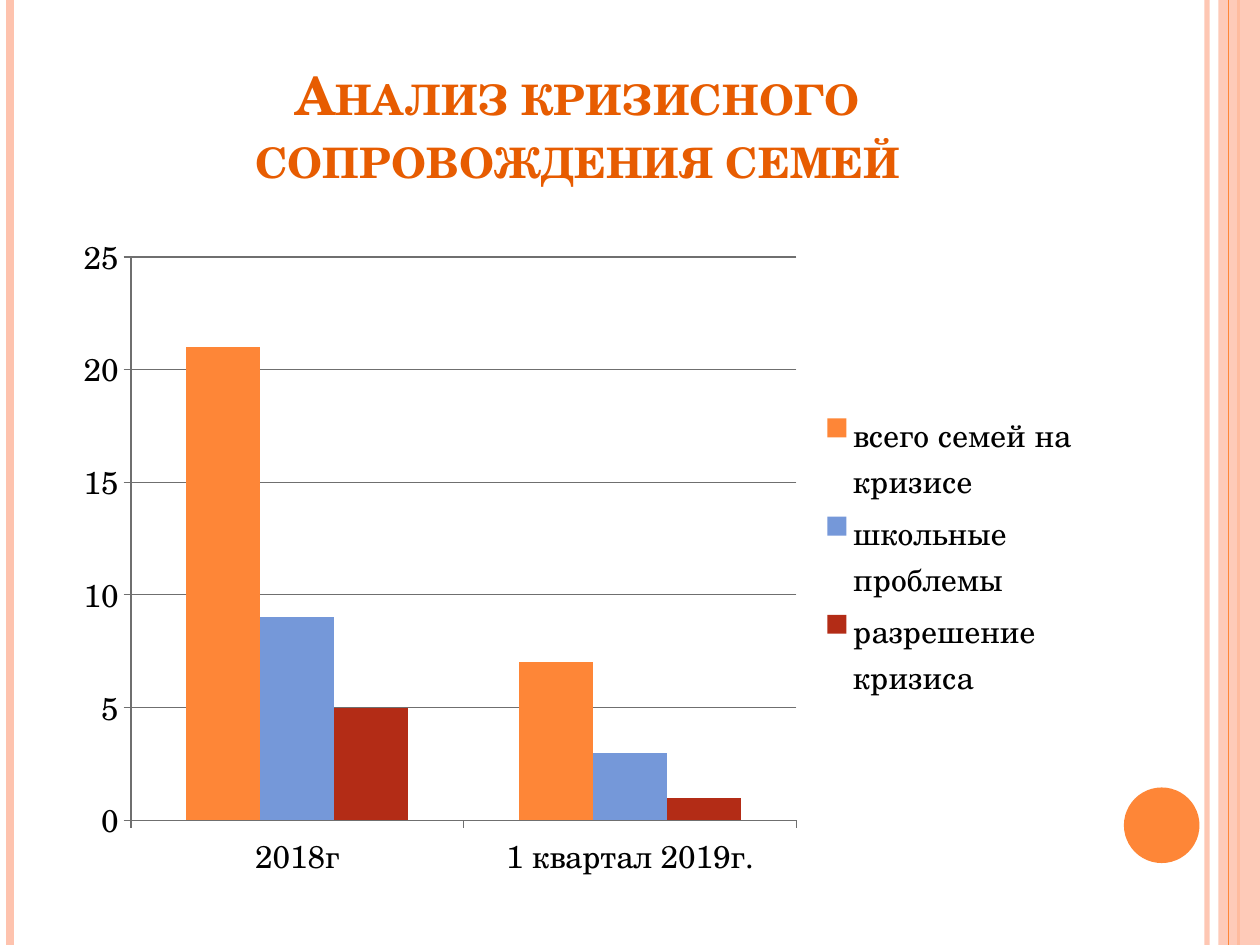
from dataclasses import dataclass

from lxml import etree
from pptx import Presentation
from pptx.chart.data import CategoryChartData
from pptx.dml.color import RGBColor
from pptx.enum.chart import XL_CHART_TYPE, XL_LEGEND_POSITION, XL_TICK_MARK
from pptx.enum.shapes import MSO_CONNECTOR, MSO_SHAPE
from pptx.enum.text import MSO_ANCHOR, MSO_AUTO_SIZE, PP_ALIGN
from pptx.oxml.ns import qn
from pptx.util import Inches, Pt

COLUMN = XL_CHART_TYPE.COLUMN_CLUSTERED
RIGHT = XL_LEGEND_POSITION.RIGHT
OUTSIDE = XL_TICK_MARK.OUTSIDE
STRAIGHT = MSO_CONNECTOR.STRAIGHT
RECT, OVAL = MSO_SHAPE.RECTANGLE, MSO_SHAPE.OVAL
BOTTOM, CENTER, FIXED = MSO_ANCHOR.BOTTOM, PP_ALIGN.CENTER, MSO_AUTO_SIZE.NONE

WIDE, HIGH = 10, 7.5
LEFT, SPAN = 0.5, 8.17
TITLE = "Анализ кризисного сопровождения семей"
CATS = ["2018г", "1 квартал 2019г."]
DATA = {
    "всего семей на кризисе": (21, 7),
    "школьные проблемы": (9, 3),
    "разрешение кризиса": (5, 1),
}


@dataclass(frozen=True)
class Theme:
    """Colours, font and type sizes of the slide."""
    font: str = "TeX Gyre Schola"
    head: str = "E75C01"
    text: str = "000000"
    pale: str = "FEC3AE"
    main: str = "FE8637"
    axis: str = "6F6F6F"
    bars: tuple = ("FE8637", "7598D9", "B32C16")
    title: int = 30
    label: int = 18


THEME = Theme()


def rgb(code):
    """Turn a hex code into a colour."""
    return RGBColor.from_string(code)


def apply(item, **values):
    """Set each given attribute on an item."""
    for name, value in values.items():
        setattr(item, name, value)


def paint(fill, code, alpha=100):
    """Fill with one colour at a given opacity in percent."""
    fill.solid()
    fill.fore_color.rgb = rgb(code)
    if alpha < 100:
        tint = fill._xPr.find(".//" + qn("a:srgbClr"))
        etree.SubElement(tint, qn("a:alpha")).set("val", str(alpha * 1000))


def style(font, size, code, bold=False):
    """Give a font the theme's face with a size and colour."""
    apply(font, name=THEME.font, size=Pt(size), bold=bold)
    font.color.rgb = rgb(code)


def stripe(slide, x, code, width, alpha=100):
    """Draw a line over the full height of the slide."""
    line = slide.shapes.add_connector(
        STRAIGHT, Inches(x), 0, Inches(x), Inches(HIGH))
    line.line.width = Pt(width)
    paint(line.line.fill, code, alpha)
    etree.SubElement(line._element.spPr, qn("a:effectLst"))


def block(slide, kind, box, code, alpha=100):
    """Draw a plain filled shape without an outline."""
    shape = slide.shapes.add_shape(kind, *map(Inches, box))
    shape.shadow.inherit = False
    shape.line.fill.background()
    paint(shape.fill, code, alpha)


def frame(slide):
    """Draw the stripes, band and disc at the slide's edges."""
    stripe(slide, 9.58, THEME.pale, 3, 93)
    stripe(slide, 0.08, THEME.pale, 4.5)
    stripe(slide, 9.83, THEME.main, 1.5)
    block(slide, RECT, (9.67, 0, WIDE - 9.67, HIGH), THEME.pale, 87)
    stripe(slide, 9.75, THEME.main, 0.75)
    block(slide, OVAL, (8.92, 6.25, 0.6, 0.6), THEME.main)


def head(slide):
    """Fill the title placeholder in small capitals."""
    title = slide.shapes.title
    apply(title, left=Inches(LEFT), top=Inches(0.3),
          width=Inches(SPAN), height=Inches(1.25))
    apply(title.text_frame, text=TITLE, word_wrap=True,
          auto_size=FIXED, vertical_anchor=BOTTOM)
    para = title.text_frame.paragraphs[0]
    para.alignment = CENTER
    run = para.runs[0]
    style(run.font, THEME.title, THEME.head, True)
    run._r.get_or_add_rPr().set("cap", "small")


def rule(form):
    """Draw a chart line in the axis colour."""
    form.line.width = Pt(0.75)
    paint(form.line.fill, THEME.axis)


def graph(slide):
    """Add the clustered column chart."""
    data = CategoryChartData()
    data.categories = CATS
    for name, vals in DATA.items():
        data.add_series(name, vals)
    box = map(Inches, (LEFT, 1.75, SPAN, 5.33))
    chart = slide.shapes.add_chart(COLUMN, *box, data).chart
    style(chart.font, THEME.label, THEME.text)
    apply(chart, has_title=False, has_legend=True)
    apply(chart.legend, position=RIGHT, include_in_layout=False)
    plot = chart.plots[0]
    apply(plot, gap_width=150, overlap=0, vary_by_categories=False)
    for bar, code in zip(plot.series, THEME.bars):
        paint(bar.format.fill, code)
    for axis in (chart.category_axis, chart.value_axis):
        axis.major_tick_mark = OUTSIDE
        rule(axis.format)
    apply(chart.value_axis, minimum_scale=0, maximum_scale=25,
          major_unit=5, has_major_gridlines=True)
    rule(chart.value_axis.major_gridlines.format)


def main():
    """Build and save the slide."""
    deck = Presentation()
    apply(deck, slide_width=Inches(WIDE), slide_height=Inches(HIGH))
    slide = deck.slides.add_slide(deck.slide_layouts[5])
    frame(slide)
    head(slide)
    graph(slide)
    deck.save("out.pptx")


if __name__ == "__main__":
    main()
